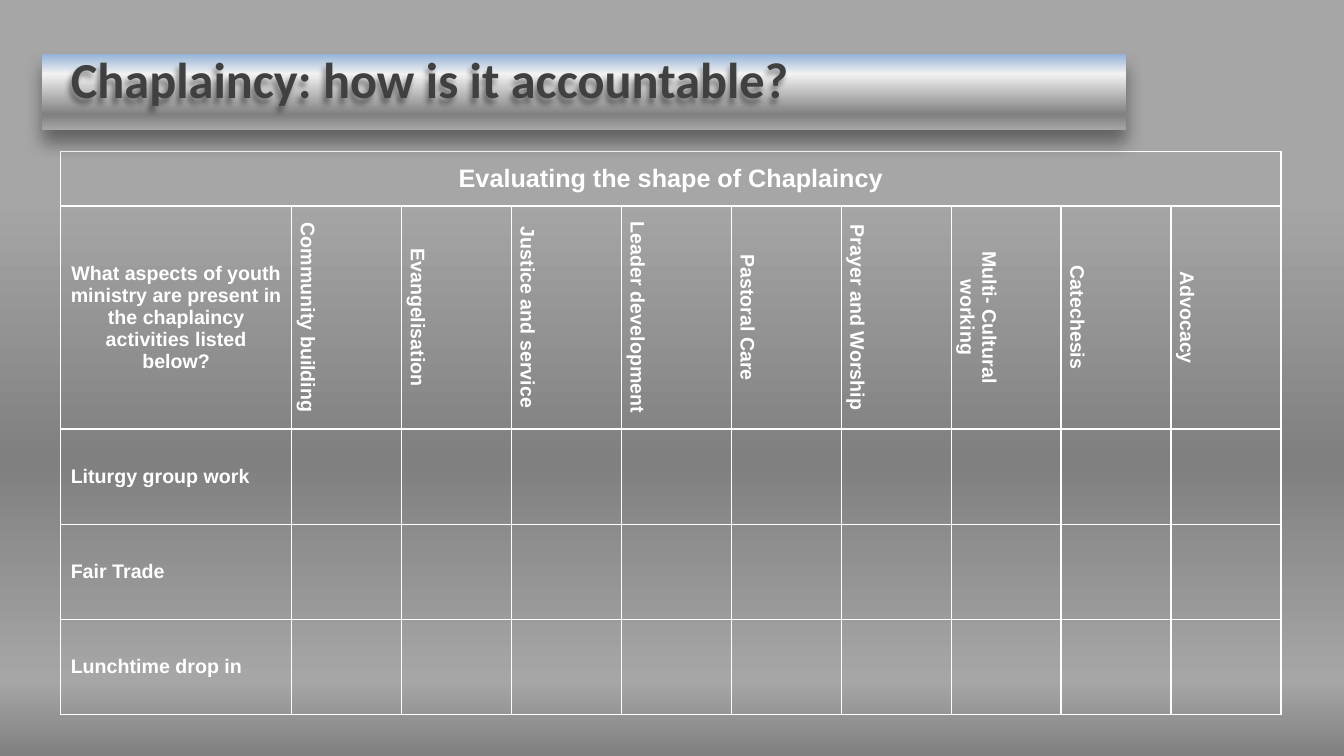
from dataclasses import dataclass

import pptx
import pptx.dml.color
import pptx.enum.text
import pptx.oxml.ns
import pptx.util
from lxml import etree
from pptx.util import Cm, Pt

qn = pptx.oxml.ns.qn
ANCHOR = pptx.enum.text.MSO_ANCHOR
ALIGN = pptx.enum.text.PP_ALIGN


@dataclass(frozen=True)
class Theme:
    title_font: str = "Calibri"
    table_font: str = "Arial"
    title_size: int = 36
    heading_size: int = 18
    label_size: int = 14
    title_colour: str = "404040"
    table_colour: str = "FFFFFF"
    shadow_colour: str = "000000"
    page_stops: tuple = ((26, "A6A6A6"), (61, "808080"), (90, "A6A6A6"), (100, "808080"))
    band_stops: tuple = ((0, "95B3D7"), (26, "F2F2F2"), (80, "808080"), (100, "A6A6A6"))


theme = Theme()


def paint_gradient(fill, owner, stops):
    """Fill the owner element from top to bottom with (percent, colour) stops."""
    fill.gradient()
    fill.gradient_angle = 270
    stop_list = owner.find(".//" + qn("a:gsLst"))
    for old_stop in list(stop_list):
        stop_list.remove(old_stop)
    for percent, colour in stops:
        stop = etree.SubElement(stop_list, qn("a:gs"), pos=str(percent * 1000))
        etree.SubElement(stop, qn("a:srgbClr"), val=colour)


def cast_shadow(shape, opacity, blur, distance, angle):
    shape.shadow.inherit = False
    effects = shape.element.spPr.find(qn("a:effectLst"))
    shadow = etree.SubElement(
        effects, qn("a:outerShdw"), blurRad=str(Pt(blur)), dist=str(Pt(distance)),
        dir=str(angle * 60000), algn="t", rotWithShape="0")
    colour = etree.SubElement(shadow, qn("a:srgbClr"), val=theme.shadow_colour)
    etree.SubElement(colour, qn("a:alpha"), val=str(opacity * 1000))


deck = pptx.Presentation()
deck.slide_width, deck.slide_height = Cm(33.87), Cm(19.05)
page = deck.slides.add_slide(deck.slide_layouts[5])
paint_gradient(page.background.fill, page.element, theme.page_stops)

# Evaluation table
aspects = ["Community building", "Evangelisation", "Justice and service",
           "Leader development", "Pastoral Care", "Prayer and Worship",
           "Multi- Cultural working", "Catechesis", "Advocacy"]
activities = ["Liturgy group work", "Fair Trade", "Lunchtime drop in"]
question = "What aspects of youth ministry are present in the chaplaincy activities listed below?"
rows = [["Evaluating the shape of Chaplaincy"], [question] + aspects]
rows += [[activity] for activity in activities]
row_heights = [1.38, 4.85] + [2.4] * len(activities)
column_widths = [5.82] + [2.77] * len(aspects)

frame = page.shapes.add_table(len(rows), len(column_widths), Cm(1.53), Cm(3.81),
                              Cm(sum(column_widths)), Cm(sum(row_heights)))
table = frame.table
table.first_row = table.horz_banding = False
for column, width in zip(table.columns, column_widths):
    column.width = Cm(width)
for row, height in zip(table.rows, row_heights):
    row.height = Cm(height)

for r, row in enumerate(table.rows):
    for c, cell in enumerate(row.cells):
        properties = cell._tc.get_or_add_tcPr()
        for side in ("a:lnL", "a:lnR", "a:lnT", "a:lnB"):
            border = etree.SubElement(properties, qn(side), w=str(Pt(1)))
            border_fill = etree.SubElement(border, qn("a:solidFill"))
            etree.SubElement(border_fill, qn("a:srgbClr"), val=theme.table_colour)
        cell.fill.background()
        cell.vertical_anchor = ANCHOR.MIDDLE
        if r == 1 and c > 0:
            properties.set("vert", "vert")
        if c < len(rows[r]):
            cell.text = rows[r][c]
            para = cell.text_frame.paragraphs[0]
            para.alignment = ALIGN.CENTER if r < 2 else ALIGN.LEFT
            para.font.name = theme.table_font
            para.font.size = Pt(theme.heading_size if r == 0 else theme.label_size)
            para.font.bold = True
            para.font.color.rgb = pptx.dml.color.RGBColor.from_string(theme.table_colour)
table.cell(0, 0).merge(table.cell(0, len(aspects)))

# Title on its band
band = page.shapes.add_shape(pptx.enum.shapes.MSO_SHAPE.RECTANGLE,
                             Cm(1.07), Cm(1.37), Cm(27.3), Cm(1.9))
paint_gradient(band.fill, band.element, theme.band_stops)
band.line.fill.background()
cast_shadow(band, opacity=40, blur=12, distance=9, angle=90)

title = page.shapes.title
band.element.addnext(title.element)
title.left, title.top, title.width, title.height = Cm(1.53), Cm(1.09), Cm(20.32), Cm(1.45)
title.text_frame.text = "Chaplaincy: how is it accountable?"
title.text_frame.word_wrap = False
title.text_frame.auto_size = pptx.enum.text.MSO_AUTO_SIZE.NONE
title.text_frame.vertical_anchor = ANCHOR.TOP
para = title.text_frame.paragraphs[0]
para.alignment = ALIGN.LEFT
para.font.name = theme.title_font
para.font.size = Pt(theme.title_size)
para.font.bold = True
para.font.color.rgb = pptx.dml.color.RGBColor.from_string(theme.title_colour)
cast_shadow(title, opacity=40, blur=4, distance=4, angle=135)

deck.save("out.pptx")
